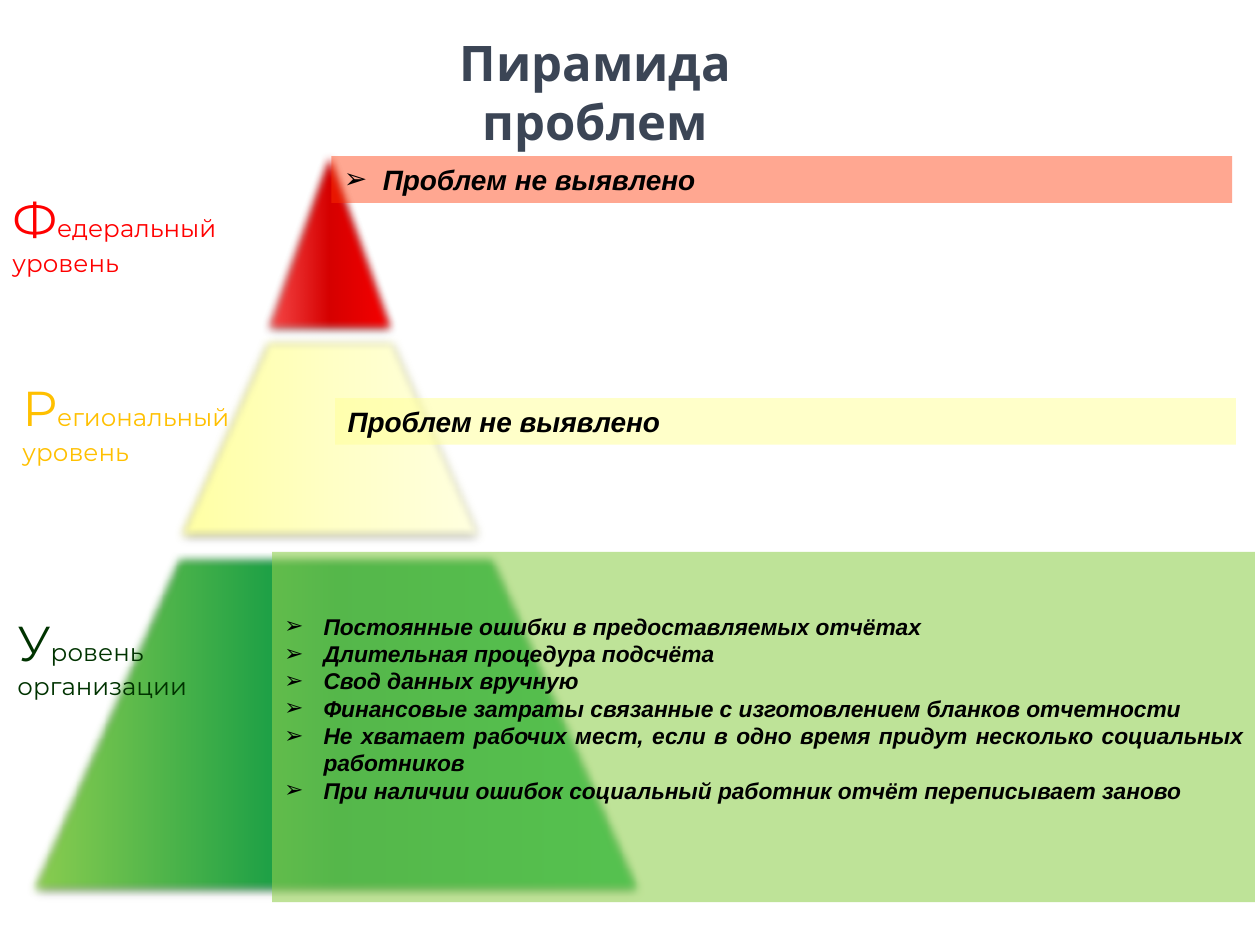
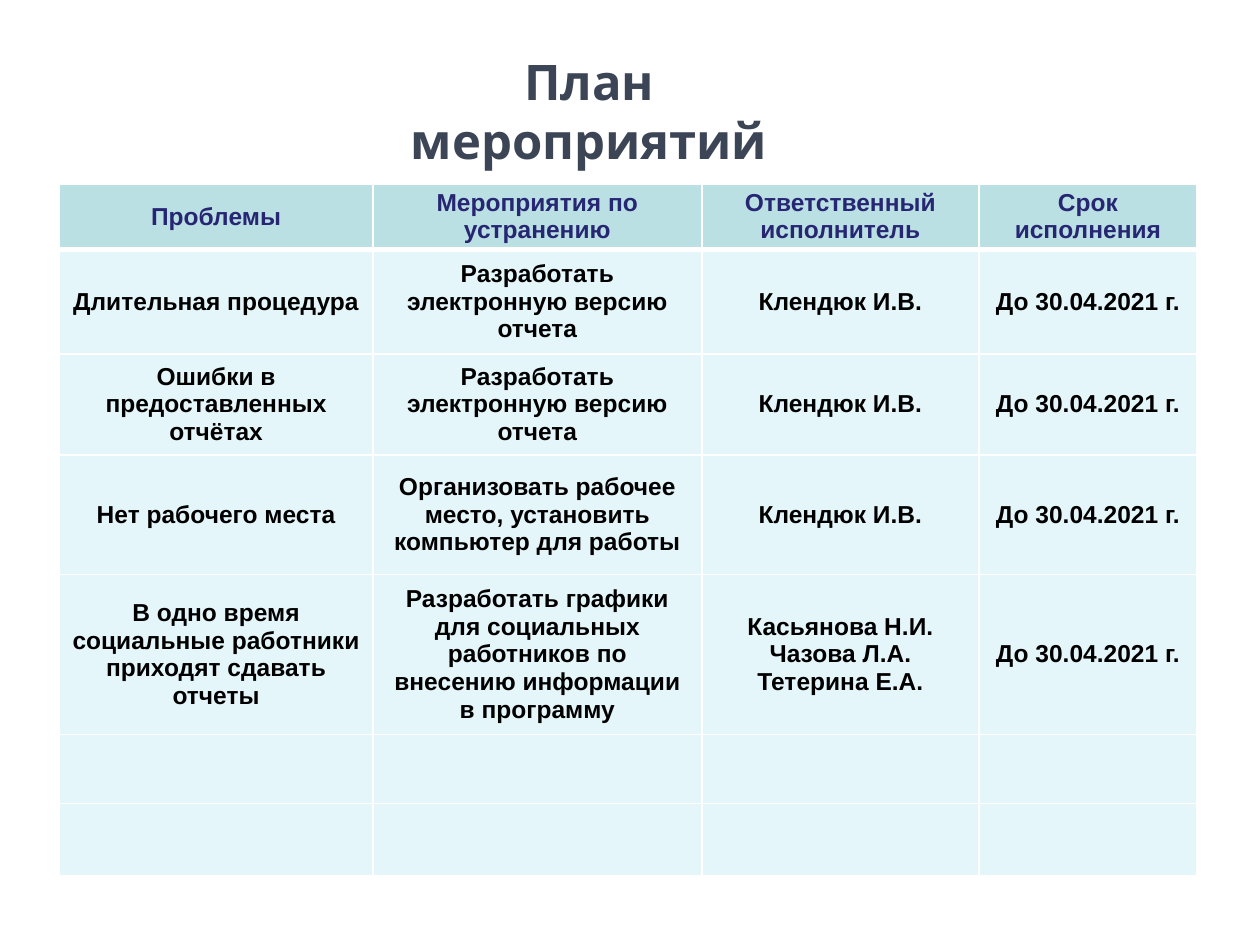
from copy import deepcopy
from dataclasses import dataclass

from lxml.etree import SubElement
from pptx import Presentation
from pptx.dml.color import RGBColor
from pptx.enum.shapes import MSO_SHAPE
from pptx.enum.text import MSO_ANCHOR, MSO_AUTO_SIZE, PP_ALIGN
from pptx.oxml.ns import qn
from pptx.util import Inches, Pt


@dataclass(frozen=True)
class Theme:
    title_font: str = "Quicksand"
    label_font: str = "Montserrat"
    body_font: str = "Arial"
    title_size: int = 28
    initial_size: int = 28
    label_size: int = 14
    note_size: int = 16
    list_size: int = 13
    table_size: int = 14
    title: str = "3B4555"
    text: str = "000000"
    header_text: str = "262673"
    header_fill: str = "BBE0E3"
    cell_fill: str = "E5F6FB"
    white: str = "FFFFFF"
    red: str = "FF0000"
    amber: str = "FFC000"
    dark_green: str = "003300"
    red_band: str = "FF3300"
    yellow_band: str = "FFFF99"
    green_band: str = "92D050"
    red_gradient: tuple = ("FF5B5B", "D70000", "FF0000")
    yellow_gradient: tuple = ("FFFFA0", "FFFFC5", "FFFFE3")
    green_gradient: tuple = ("92D050", "009443", "00B050")
    red_outline: str = "2A2A89"
    yellow_outline: str = "F9F9F9"
    green_outline: str = "B6DCDF"


THEME = Theme()

PROBLEMS = [
    "Постоянные ошибки в предоставляемых отчётах",
    "Длительная процедура подсчёта",
    "Свод данных вручную",
    "Финансовые затраты связанные с изготовлением бланков отчетности",
    "Не хватает рабочих мест, если в одно время придут несколько социальных работников",
    "При наличии ошибок социальный работник отчёт переписывает заново",
]

DEADLINE = "До 30.04.2021 г."
PLAN = [
    ["Проблемы", "Мероприятия по устранению", "Ответственный исполнитель", "Срок исполнения"],
    ["Длительная процедура", "Разработать электронную версию отчета", "Клендюк И.В.", DEADLINE],
    ["Ошибки в предоставленных отчётах", "Разработать электронную версию отчета",
     "Клендюк И.В.", DEADLINE],
    ["Нет рабочего места", "Организовать рабочее место, установить компьютер для работы",
     "Клендюк И.В.", DEADLINE],
    ["В одно время социальные работники приходят сдавать отчеты",
     "Разработать графики для социальных работников по внесению информации в программу",
     "Касьянова Н.И.\nЧазова Л.А.\nТетерина Е.А.", DEADLINE],
    [""] * 4,
    [""] * 4,
]
COLUMN_WIDTHS = [2.49, 2.61, 2.2, 1.73]
ROW_HEIGHTS = [0.52, 0.83, 0.74, 0.95, 1.18, 0.55, 0.57]


def rgb(value):
    return RGBColor.from_string(value)


def inches(*lengths):
    return [Inches(length) for length in lengths]


def add_run(para, text, font, size, color, bold=False, italic=False):
    span = para.add_run()
    span.text = text
    span.font.name = font
    span.font.size = Pt(size)
    span.font.color.rgb = rgb(color)
    span.font.bold = bold
    span.font.italic = italic


def next_paragraph(frame, index):
    return frame.add_paragraph() if index else frame.paragraphs[0]


def add_bullet(para):
    properties = para._p.get_or_add_pPr()
    properties.set("marL", str(Inches(0.31)))
    properties.set("indent", str(Inches(-0.31)))
    SubElement(properties, qn("a:buFont"), typeface=THEME.body_font)
    SubElement(properties, qn("a:buChar"), char="➢")


def add_titled_page(deck, text, left, top, width):
    page = deck.slides.add_slide(deck.slide_layouts[5])
    title = page.shapes.title
    title.left, title.top, title.width, title.height = inches(left, top, width, 0.57)
    frame = title.text_frame
    frame.word_wrap = True
    frame.auto_size = MSO_AUTO_SIZE.SHAPE_TO_FIT_TEXT
    frame.vertical_anchor = MSO_ANCHOR.TOP
    para = frame.paragraphs[0]
    para.alignment = PP_ALIGN.CENTER
    add_run(para, text, THEME.title_font, THEME.title_size, THEME.title, bold=True)
    return page


def fill_gradient(shape, colors):
    shape.fill.gradient()
    shape.fill.gradient_angle = 0
    stop_list = shape._element.spPr.find(qn("a:gradFill")).find(qn("a:gsLst"))
    stop_list.insert(1, deepcopy(stop_list[0]))
    for index, (stop, color) in enumerate(zip(shape.fill.gradient_stops, colors)):
        stop.position = index / 2
        stop.color.rgb = rgb(color)


def soften(shape):
    shape.shadow.inherit = False
    effects = shape._element.spPr.find(qn("a:effectLst"))
    shadow = SubElement(effects, qn("a:outerShdw"), blurRad=str(Pt(3.1)),
                        dist=str(Pt(1.6)), dir="5400000", rotWithShape="0")
    color = SubElement(shadow, qn("a:srgbClr"), val="000000")
    SubElement(color, qn("a:alpha"), val="38000")
    SubElement(effects, qn("a:softEdge"), rad=str(Pt(5)))


def add_tier(page, preset, place, adjustment, gradient, outline):
    tier = page.shapes.add_shape(preset, *inches(*place))
    tier.adjustments[0] = adjustment
    fill_gradient(tier, gradient)
    tier.line.color.rgb = rgb(outline)
    tier.line.width = Pt(0.75)
    soften(tier)


def add_band(page, place, color, opacity, lines, size, bulleted=True,
             alignment=PP_ALIGN.LEFT, top_margin=0.05):
    band = page.shapes.add_shape(MSO_SHAPE.RECTANGLE, *inches(*place))
    band.shadow.inherit = False
    band.fill.solid()
    band.fill.fore_color.rgb = rgb(color)
    color_element = band._element.spPr.find(qn("a:solidFill"))[0]
    SubElement(color_element, qn("a:alpha"), val=str(opacity * 1000))
    band.line.fill.background()
    frame = band.text_frame
    frame.word_wrap = True
    frame.vertical_anchor = MSO_ANCHOR.TOP
    frame.margin_top = Inches(top_margin)
    for index, line in enumerate(lines):
        para = next_paragraph(frame, index)
        para.alignment = alignment
        if bulleted:
            add_bullet(para)
        add_run(para, line, THEME.body_font, size, THEME.text, bold=True, italic=True)


def add_level_label(page, left, top, width, text, color):
    box = page.shapes.add_textbox(*inches(left, top, width, 0.81))
    box.text_frame.word_wrap = True
    para = box.text_frame.paragraphs[0]
    add_run(para, text[0], THEME.label_font, THEME.initial_size, color)
    add_run(para, text[1:], THEME.label_font, THEME.label_size, color)


def set_borders(cell, bottom_width):
    properties = cell._tc.get_or_add_tcPr()
    widths = {"a:lnL": 1, "a:lnR": 1, "a:lnT": 1, "a:lnB": bottom_width}
    for index, (side, width) in enumerate(widths.items()):
        line = properties.makeelement(qn(side), {"w": str(Pt(width))})
        fill = SubElement(line, qn("a:solidFill"))
        SubElement(fill, qn("a:srgbClr"), val=THEME.white)
        properties.insert(index, line)


def fill_cell(cell, text, is_header):
    cell.fill.solid()
    cell.fill.fore_color.rgb = rgb(THEME.header_fill if is_header else THEME.cell_fill)
    set_borders(cell, 3 if is_header else 1)
    if is_header:
        cell.margin_left = cell.margin_right = Inches(0.07)
        cell.margin_top = cell.margin_bottom = 0
    cell.vertical_anchor = MSO_ANCHOR.MIDDLE
    if not text:
        return
    color = THEME.header_text if is_header else THEME.text
    for index, line in enumerate(text.split("\n")):
        para = next_paragraph(cell.text_frame, index)
        para.alignment = PP_ALIGN.CENTER
        add_run(para, line, THEME.body_font, THEME.table_size, color, bold=True)


def add_plan_table(page):
    place = inches(0.47, 1.46, sum(COLUMN_WIDTHS), sum(ROW_HEIGHTS))
    table = page.shapes.add_table(len(PLAN), len(COLUMN_WIDTHS), *place).table
    for column, width in zip(table.columns, COLUMN_WIDTHS):
        column.width = Inches(width)
    for row, height in zip(table.rows, ROW_HEIGHTS):
        row.height = Inches(height)
    for row_index, texts in enumerate(PLAN):
        for column_index, text in enumerate(texts):
            fill_cell(table.cell(row_index, column_index), text, row_index == 0)


def build_pyramid_page(deck):
    page = add_titled_page(deck, "Пирамида проблем", 2.73, 0.21, 3.99)
    add_tier(page, MSO_SHAPE.ISOSCELES_TRIANGLE, (2.03, 1.02, 1.17, 1.64), 0.5,
             THEME.red_gradient, THEME.red_outline)
    add_tier(page, MSO_SHAPE.TRAPEZOID, (1.33, 2.66, 2.58, 1.64), 0.45,
             THEME.yellow_gradient, THEME.yellow_outline)
    add_tier(page, MSO_SHAPE.TRAPEZOID, (0.16, 4.38, 5, 2.73), 0.44,
             THEME.green_gradient, THEME.green_outline)
    no_problems = ["Проблем не выявлено"]
    add_band(page, (2.63, 1.24, 7.15, 0.37), THEME.red_band, 43, no_problems, THEME.note_size)
    add_band(page, (2.66, 3.16, 7.15, 0.37), THEME.yellow_band, 53, no_problems,
             THEME.note_size, bulleted=False)
    add_band(page, (2.16, 4.38, 7.8, 2.78), THEME.green_band, 59, PROBLEMS, THEME.list_size,
             alignment=PP_ALIGN.JUSTIFY, top_margin=0.48)
    add_level_label(page, 0, 1.45, 2.2, "Федеральный уровень", THEME.red)
    add_level_label(page, 0.08, 2.95, 2.13, "Региональный уровень", THEME.amber)
    add_level_label(page, 0.04, 4.81, 1.95, "Уровень организации", THEME.dark_green)


def build_plan_page(deck):
    page = add_titled_page(deck, "План мероприятий", 2.72, 0.36, 3.91)
    add_plan_table(page)


def main():
    deck = Presentation()
    deck.slide_width, deck.slide_height = inches(10, 7.5)
    build_pyramid_page(deck)
    build_plan_page(deck)
    deck.save("out.pptx")


if __name__ == "__main__":
    main()
